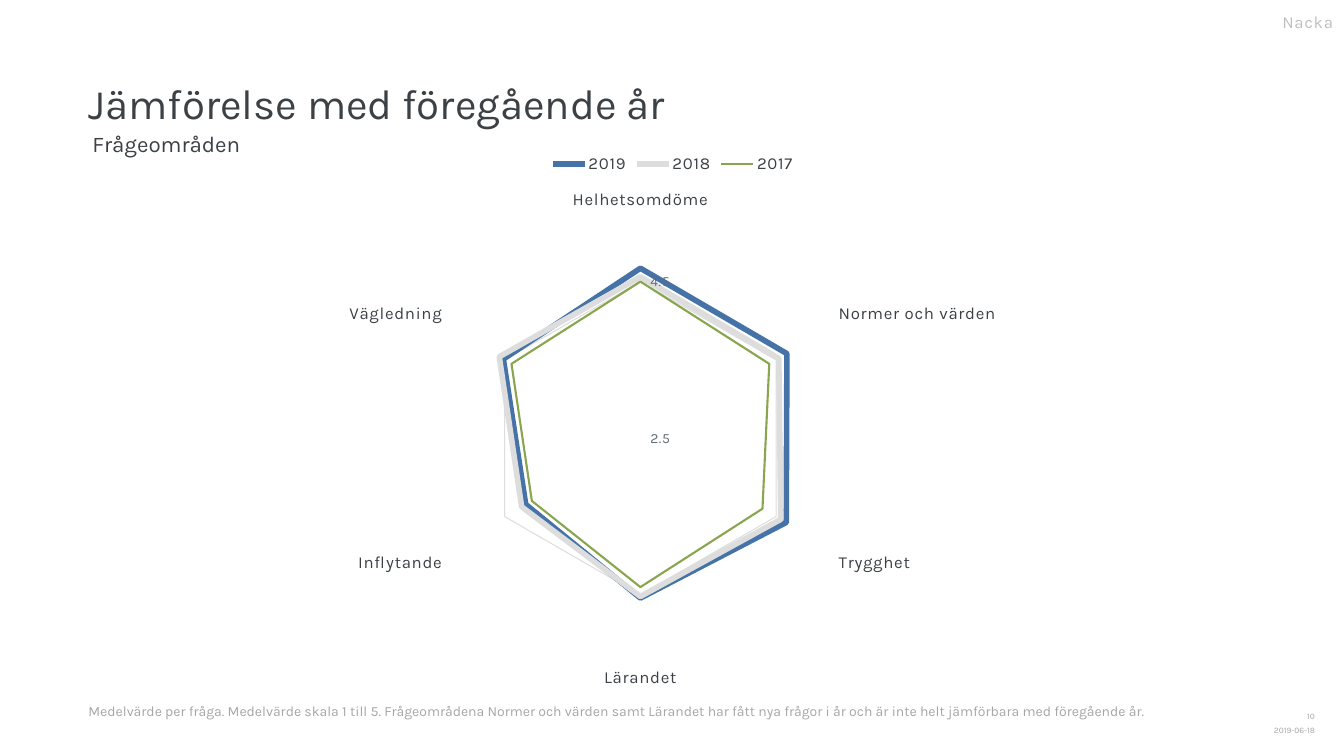
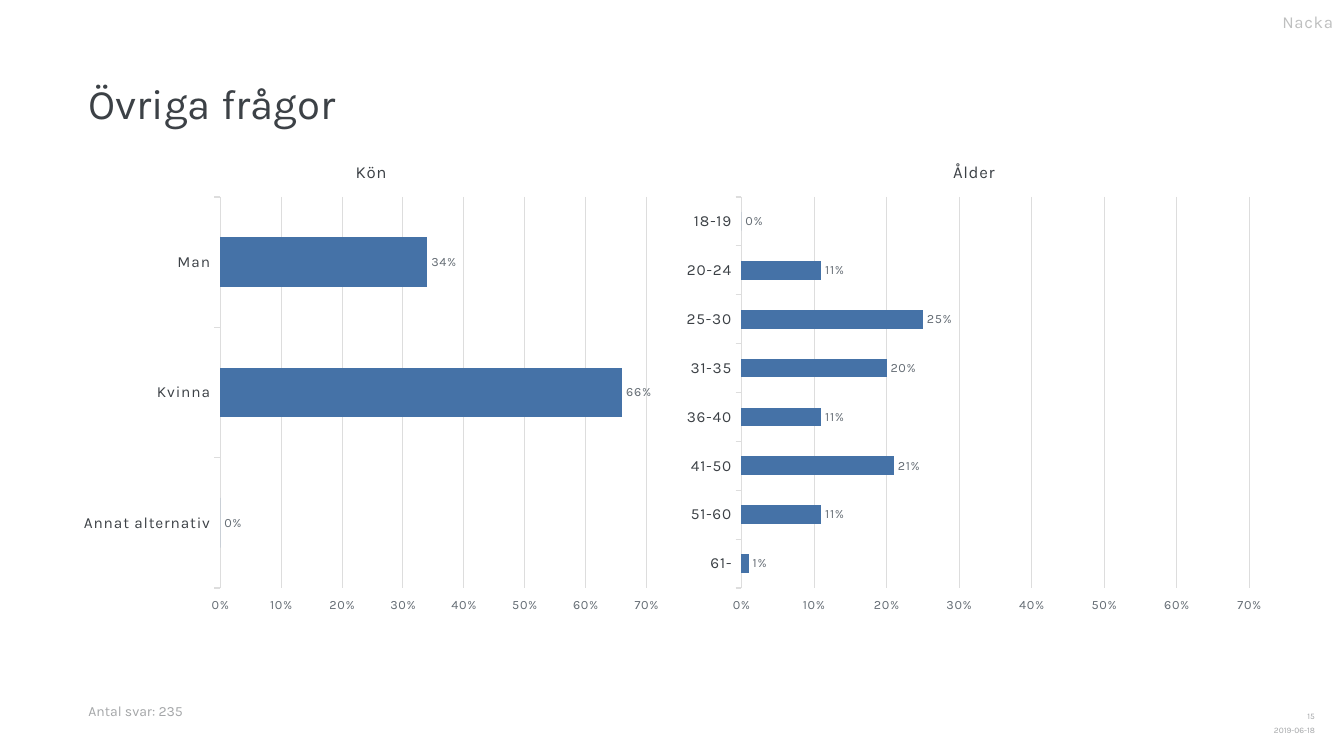
from typing import NamedTuple

from pptx import Presentation
from pptx import util as u
from pptx.chart import data
from pptx.dml import color
from pptx.enum import chart as ch
from pptx.enum import text
from pptx.oxml import ns

FACE = "Karla"
INK, GREY, SOFT, PALE = "3C4146", "646C74", "A4A6A8", "BEBFBF"
RULE, BLUE, GREEN = "DDDDDD", "4572A7", "89A54E"
LEFT, RIGHT = text.PP_ALIGN.LEFT, text.PP_ALIGN.RIGHT
TOP, BASE = text.MSO_ANCHOR.TOP, text.MSO_ANCHOR.BOTTOM


class Box(NamedTuple):
    left: float
    top: float
    width: float
    height: float

    def cm(self) -> list:
        return [u.Cm(v) for v in self]


class Label(NamedTuple):
    box: Box
    size: float
    ink: str
    align: int = LEFT
    anchor: int = TOP
    before: float = 0
    lines: float = 1.0


class Line(NamedTuple):
    name: str
    ink: str
    width: float
    vals: tuple


class Bars(NamedTuple):
    name: str
    left: float
    cats: tuple
    vals: tuple


TITLE = Label(Box(2.23, 0.88, 29.41, 2.36), 30, INK, anchor=BASE, lines=0.9)
SUB = Label(Box(2.33, 3.28, 29.31, 0.81), 16, INK, before=6)
NOTE = Label(Box(2.23, 17.7, 29.49, 0.81), 10, SOFT)
TAG = Label(Box(0.3, 0.3, 33.3, 1.09), 12, PALE, RIGHT)
PAGE = Label(Box(25.52, 17.75, 7.62, 0.43), 6, SOFT, RIGHT, BASE)
DATE = Label(Box(25.52, 18.22, 7.62, 0.3), 6, SOFT, RIGHT, BASE)

AREAS = ("Helhetsomdöme", "Normer och värden", "Trygghet",
         "Lärandet", "Inflytande", "Vägledning")
YEARS = (
    Line("2019", BLUE, 4, (4.67, 4.66, 4.65, 4.54, 4.19, 4.52)),
    Line("2018", RULE, 4, (4.56, 4.54, 4.57, 4.52, 4.25, 4.58)),
    Line("2017", GREEN, 1.5, (4.5, 4.4, 4.3, 4.4, 4.1, 4.4)),
)
GROUPS = (
    Bars("Kön", 1.81, ("Man", "Kvinna", "Annat alternativ"), (0.34, 0.66, 0)),
    Bars("Ålder", 17,
         ("18-19", "20-24", "25-30", "31-35", "36-40", "41-50", "51-60", "61-"),
         (0, 0.11, 0.25, 0.2, 0.11, 0.21, 0.11, 0.01)),
)


def rgb(ink: str) -> color.RGBColor:
    return color.RGBColor.from_string(ink)


def style(font, size: float, ink: str) -> None:
    font.name = FACE
    font.size = u.Pt(size)
    font.bold = False
    font.color.rgb = rgb(ink)


def space(root) -> None:
    for item in root.iter(ns.qn("a:defRPr")):
        item.set("spc", "50")


def stroke(line, ink: str, width: float = 0.75) -> None:
    line.color.rgb = rgb(ink)
    line.width = u.Pt(width)


def write(shape, words: str, look: Label) -> None:
    shape.left, shape.top, shape.width, shape.height = look.box.cm()
    frame = shape.text_frame
    frame.word_wrap = True
    frame.auto_size = text.MSO_AUTO_SIZE.NONE
    frame.vertical_anchor = look.anchor
    frame.margin_left = frame.margin_right = 0
    frame.margin_top = frame.margin_bottom = 0
    frame.text = words
    para = frame.paragraphs[0]
    para.alignment = look.align
    para.space_before = u.Pt(look.before)
    para.line_spacing = look.lines
    style(para.font, look.size, look.ink)


def label(slide, words: str, look: Label):
    shape = slide.shapes.add_textbox(*look.box.cm())
    write(shape, words, look)
    return shape


def start(deck, title: str, note: str, page: str):
    slide = deck.slides.add_slide(deck.slide_layouts[5])
    write(slide.shapes.title, title, TITLE)
    label(slide, "2019-06-18", DATE)
    label(slide, page, PAGE)
    label(slide, note, NOTE)
    space(label(slide, "Nacka", TAG).element)
    return slide


def plot(slide, kind, box: Box, cats: tuple, rows: tuple, form: str):
    info = data.CategoryChartData(number_format=form)
    info.categories = cats
    for row in rows:
        info.add_series(row.name, row.vals)
    chart = slide.shapes.add_chart(kind, *box.cm(), info).chart
    style(chart.font, 10, INK)
    chart.plots[0].vary_by_categories = False
    return chart


def axes(chart, low: float, high: float, step: float, form: str,
         big: float, small: float) -> None:
    cat, val = chart.category_axis, chart.value_axis
    for axis, size, ink in ((cat, big, INK), (val, small, GREY)):
        axis.major_tick_mark = ch.XL_TICK_MARK.OUTSIDE
        axis.minor_tick_mark = ch.XL_TICK_MARK.NONE
        style(axis.tick_labels.font, size, ink)
    stroke(cat.format.line, RULE)
    val.format.line.fill.background()
    val.has_major_gridlines = True
    stroke(val.major_gridlines.format.line, RULE)
    val.minimum_scale, val.maximum_scale, val.major_unit = low, high, step
    val.tick_labels.number_format = form
    val.tick_labels.number_format_is_linked = False


def radar(slide) -> None:
    chart = plot(slide, ch.XL_CHART_TYPE.RADAR, Box(0.3, 3.6, 33.3, 14),
                 AREAS, YEARS, "0.0")
    chart.has_title = False
    axes(chart, 2.5, 5, 2, "0.0;0.0", 12, 10)
    cat = chart.category_axis
    cat.has_major_gridlines = True
    stroke(cat.major_gridlines.format.line, RULE)
    chart.has_legend = True
    chart.legend.position = ch.XL_LEGEND_POSITION.TOP
    chart.legend.include_in_layout = False
    style(chart.legend.font, 12, INK)
    for row, year in zip(chart.plots[0].series, YEARS):
        stroke(row.format.line, year.ink, year.width)
        row.marker.style = ch.XL_MARKER_STYLE.NONE
    space(chart.element)


def bars(slide, group: Bars) -> None:
    form = "0%;0%"
    chart = plot(slide, ch.XL_CHART_TYPE.BAR_CLUSTERED,
                 Box(group.left, 3.59, 15.09, 12.09),
                 group.cats, (group,), "0%")
    chart.has_legend = False
    chart.has_title = True
    frame = chart.chart_title.text_frame
    frame.text = group.name
    style(frame.paragraphs[0].font, 12, INK)
    axes(chart, 0, 0.71, 0.1, form, 11, 9)
    chart.category_axis.reverse_order = True
    chart.value_axis.tick_label_position = ch.XL_TICK_LABEL_POSITION.HIGH
    body = chart.plots[0]
    body.gap_width = 162
    fill = body.series[0].format.fill
    fill.solid()
    fill.fore_color.rgb = rgb(BLUE)
    body.has_data_labels = True
    tips = body.data_labels
    tips.show_value = True
    tips.position = ch.XL_LABEL_POSITION.OUTSIDE_END
    tips.number_format = form
    tips.number_format_is_linked = False
    style(tips.font, 9, GREY)
    space(chart.element)


def main() -> None:
    deck = Presentation()
    deck.slide_width, deck.slide_height = u.Cm(33.87), u.Cm(19.05)

    slide = start(
        deck, "Jämförelse med föregående år",
        "Medelvärde per fråga. Medelvärde skala 1 till 5. Frågeområdena "
        "Normer och värden samt Lärandet har fått nya frågor i år och är "
        "inte helt jämförbara med föregående år.", "10")
    label(slide, "Frågeområden", SUB)
    radar(slide)

    slide = start(deck, "Övriga frågor", "Antal svar: 235", "15")
    for group in GROUPS:
        bars(slide, group)

    deck.save("out.pptx")


if __name__ == "__main__":
    main()
